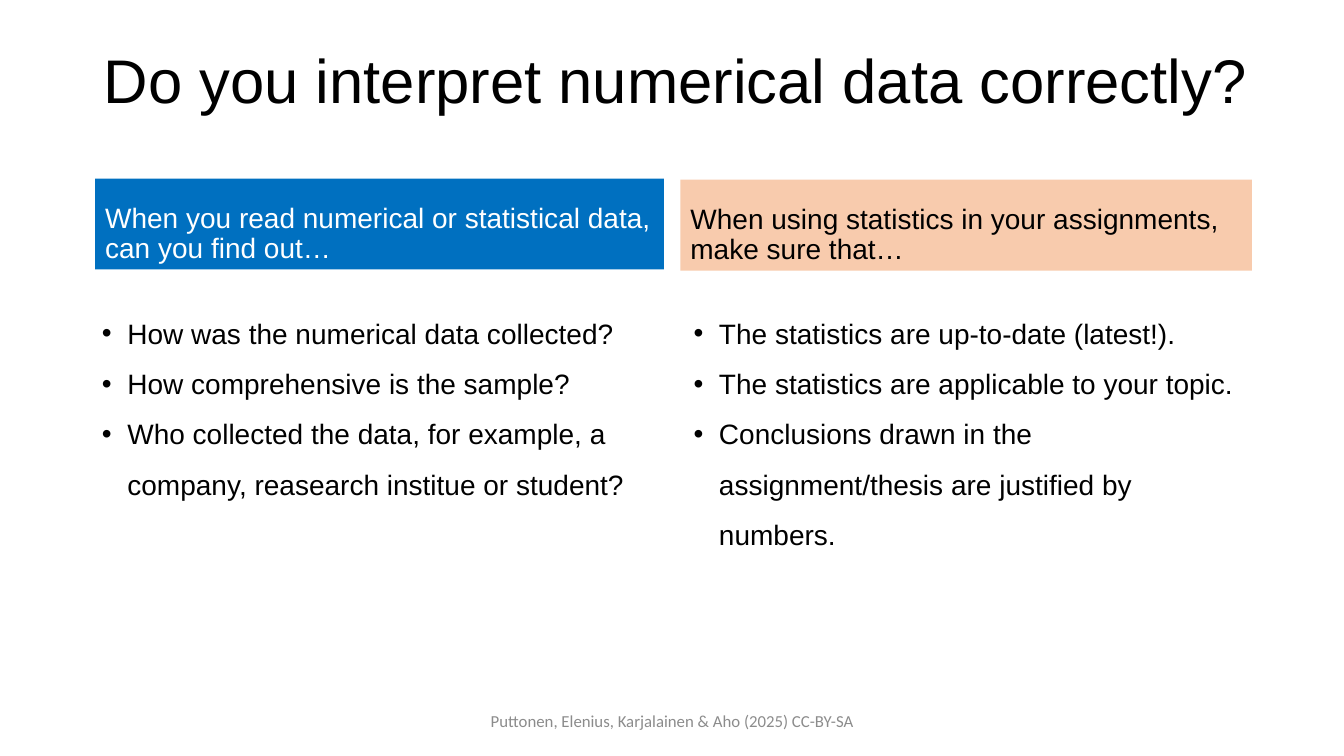
from collections import namedtuple
from dataclasses import dataclass

from lxml.etree import SubElement
from pptx import Presentation
from pptx.dml.color import RGBColor
from pptx.enum.shapes import MSO_SHAPE as Preset
from pptx.enum.text import MSO_ANCHOR as Anchor, MSO_AUTO_SIZE as AutoSize, PP_ALIGN as Align
from pptx.oxml.ns import qn
from pptx.util import Cm, Pt

Box = namedtuple("Box", "left top width height")


@dataclass(frozen=True)
class Theme:
    black: str = "000000"
    white: str = "FFFFFF"
    grey: str = "8C8C8C"
    blue: str = "0070C0"
    peach: str = "F8CBAD"
    font: str = "Arial"
    footer_font: str = "Calibri"
    title_size: int = 44
    body_size: int = 20
    footer_size: int = 12


THEME = Theme()


def add_bullet(para, indent=0.64):
    properties = para._p.get_or_add_pPr()
    properties.set("marL", str(Cm(indent)))
    properties.set("indent", str(-Cm(indent)))
    SubElement(properties, qn("a:buFont"), typeface="Arial")
    SubElement(properties, qn("a:buChar"), char="•")


def write(shape, *lines, size=THEME.body_size, color=THEME.black, font=THEME.font,
          anchor=Anchor.TOP, align=Align.LEFT, spacing=0.9, before=0, bullets=False):
    """Fill a shape with one paragraph per line."""
    frame = shape.text_frame
    frame.word_wrap = True
    frame.auto_size = AutoSize.NONE
    frame.vertical_anchor = anchor
    for index, line in enumerate(lines):
        para = frame.paragraphs[0] if index == 0 else frame.add_paragraph()
        para.alignment = align
        para.line_spacing = spacing
        para.space_before = Pt(before)
        if bullets:
            add_bullet(para)
        span = para.add_run()
        span.text = line
        span.font.name = font
        span.font.size = Pt(size)
        span.font.color.rgb = RGBColor.from_string(color)


def lengths(box):
    return [Cm(value) for value in box]


def place_title(page, box, text):
    title = page.shapes.title
    title.left, title.top, title.width, title.height = lengths(box)
    write(title, text, size=THEME.title_size)
    title.text_frame.margin_top = Cm(0.25)


def add_heading(page, box, text, fill, color):
    band = page.shapes.add_shape(Preset.RECTANGLE, *lengths(box))
    band.shadow.inherit = False
    band.fill.solid()
    band.fill.fore_color.rgb = RGBColor.from_string(fill)
    band.line.fill.background()
    write(band, text, color=color, anchor=Anchor.BOTTOM, before=10)


def add_column(page, box, heading, points, fill, color, shift):
    """Place a heading band with a bullet list, moved sideways by shift, below it."""
    add_heading(page, box._replace(height=2.29), heading, fill, color)
    list_top = 7.42
    list_box = Box(box.left + shift, list_top, box.width, box.top + box.height - list_top)
    write(page.shapes.add_textbox(*lengths(list_box)), *points, spacing=1.5, bullets=True)


def add_footer(page, box, text):
    write(page.shapes.add_textbox(*lengths(box)), text, size=THEME.footer_size,
          color=THEME.grey, font=THEME.footer_font, anchor=Anchor.MIDDLE,
          align=Align.CENTER, spacing=1.0)


def build_slide(deck):
    page = deck.slides.add_slide(deck.slide_layouts[5])
    place_title(page, Box(2.36, 1.02, 30.81, 3.71), "Do you interpret numerical data correctly?")
    add_column(
        page, Box(2.4, 4.5, 14.33, 11.05),
        "When you read numerical or statistical data, can you find out…",
        ["How was the numerical data collected?",
         "How comprehensive is the sample?",
         "Who collected the data, for example, a company, reasearch institue or student?"],
        fill=THEME.blue, color=THEME.white, shift=-0.08)
    add_column(
        page, Box(17.15, 4.53, 14.4, 10.25),
        "When using statistics in your assignments, make sure that…",
        ["The statistics are up-to-date (latest!).",
         "The statistics are applicable to your topic.",
         "Conclusions drawn in the assignment/thesis are justified by numbers."],
        fill=THEME.peach, color=THEME.black, shift=0.08)
    add_footer(page, Box(11.23, 17.65, 11.43, 1.02),
               "Puttonen, Elenius, Karjalainen & Aho (2025) CC-BY-SA")


def main():
    deck = Presentation()
    deck.slide_width, deck.slide_height = Cm(33.87), Cm(19.05)
    build_slide(deck)
    deck.save("out.pptx")


if __name__ == "__main__":
    main()
